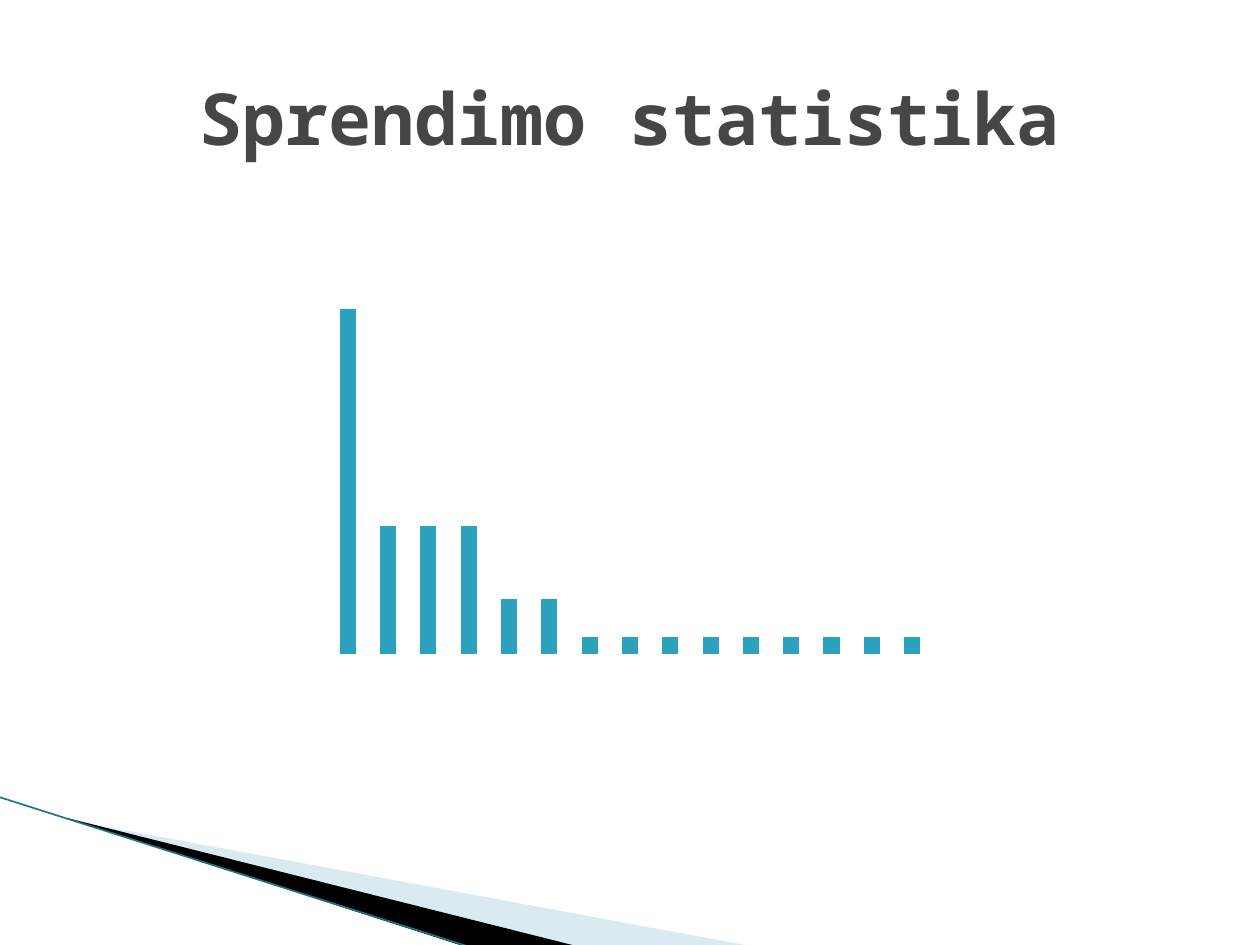
"""Build the solution statistics slide with its column chart and corner wedges."""
from lxml.etree import SubElement
from pptx import Presentation
from pptx.chart.data import CategoryChartData
from pptx.dml.color import RGBColor
from pptx.enum.chart import XL_CHART_TYPE
from pptx.enum.shapes import MSO_CONNECTOR
from pptx.enum.text import MSO_ANCHOR, PP_ALIGN
from pptx.oxml.ns import qn
from pptx.util import Emu, Pt

SCALE = 914400 / 126
FONT = "Noto Sans Mono"


def px(*lengths):
    return [Emu(round(length * SCALE)) for length in lengths]


def paint(color_format, color):
    color_format.rgb = RGBColor.from_string(color)


deck = Presentation()
deck.slide_width, deck.slide_height = px(1260, 945)
page = deck.slides.add_slide(deck.slide_layouts[6])

wedges = [
    ("A0CBDC", 40, (98, 689, 524, 199), [(69, 820), (750, 946), (575, 946), (69, 819)]),
    ("000000", 100, (-8, 798, 524, 116), [(67, 818), (576, 946), (469, 948), (68, 819)]),
]
for color, opacity, frame, points in wedges:
    builder = page.shapes.build_freeform(*points[0], scale=SCALE)
    builder.add_line_segments(points[1:], close=True)
    wedge = builder.convert_to_shape()
    wedge.left, wedge.top, wedge.width, wedge.height = px(*frame)
    outline = next(wedge._element.iter(qn("a:path")))
    outline.set("w", str(frame[2]))
    outline.set("h", str(frame[3]))
    for vertex, (x, y) in zip(outline.iter(qn("a:pt")), points):
        vertex.set("x", str(x - frame[0]))
        vertex.set("y", str(y - frame[1]))
    wedge.shadow.inherit = False
    wedge.line.fill.background()
    wedge.fill.solid()
    paint(wedge.fill.fore_color, color)
    if opacity < 100:
        fill_color = wedge.fill._xPr.find(qn("a:solidFill"))[0]
        SubElement(fill_color, qn("a:alpha"), val=str(opacity * 1000))

edge = page.shapes.add_connector(MSO_CONNECTOR.STRAIGHT, *px(-1, 797, 470, 947))
edge.line.width = Pt(0.95)
paint(edge.line.color, "1F7486")
SubElement(edge._element.spPr, qn("a:effectLst"))

values = [100] + [37] * 3 + [16] * 2 + [5] * 9
chart_data = CategoryChartData()
chart_data.categories = [str(number) for number in range(1, len(values) + 1)]
chart_data.add_series("Series 1", values)
chart = page.shapes.add_chart(
    XL_CHART_TYPE.COLUMN_CLUSTERED, *px(315, 284, 630, 378), chart_data
).chart
chart.has_legend = False
chart.has_title = False
chart.font.name = FONT
chart.font.size = Pt(10)
paint(chart.font.color, "000000")
chart.category_axis.visible = False
chart.value_axis.visible = False
chart.value_axis.has_major_gridlines = False
chart.value_axis.minimum_scale = 0
chart.value_axis.maximum_scale = 105
plot = chart.plots[0]
plot.gap_width = 150
plot.vary_by_categories = False
columns = plot.series[0]
columns.format.fill.solid()
paint(columns.format.fill.fore_color, "2DA2BF")

title = page.shapes.add_textbox(*px(63, 38, 1134, 158)).text_frame
title.word_wrap = True
title.vertical_anchor = MSO_ANCHOR.MIDDLE
para = title.paragraphs[0]
para.text = "Sprendimo statistika"
para.alignment = PP_ALIGN.CENTER
para.font.name = FONT
para.font.size = Pt(41)
para.font.bold = True
paint(para.font.color, "464646")

deck.save("out.pptx")
